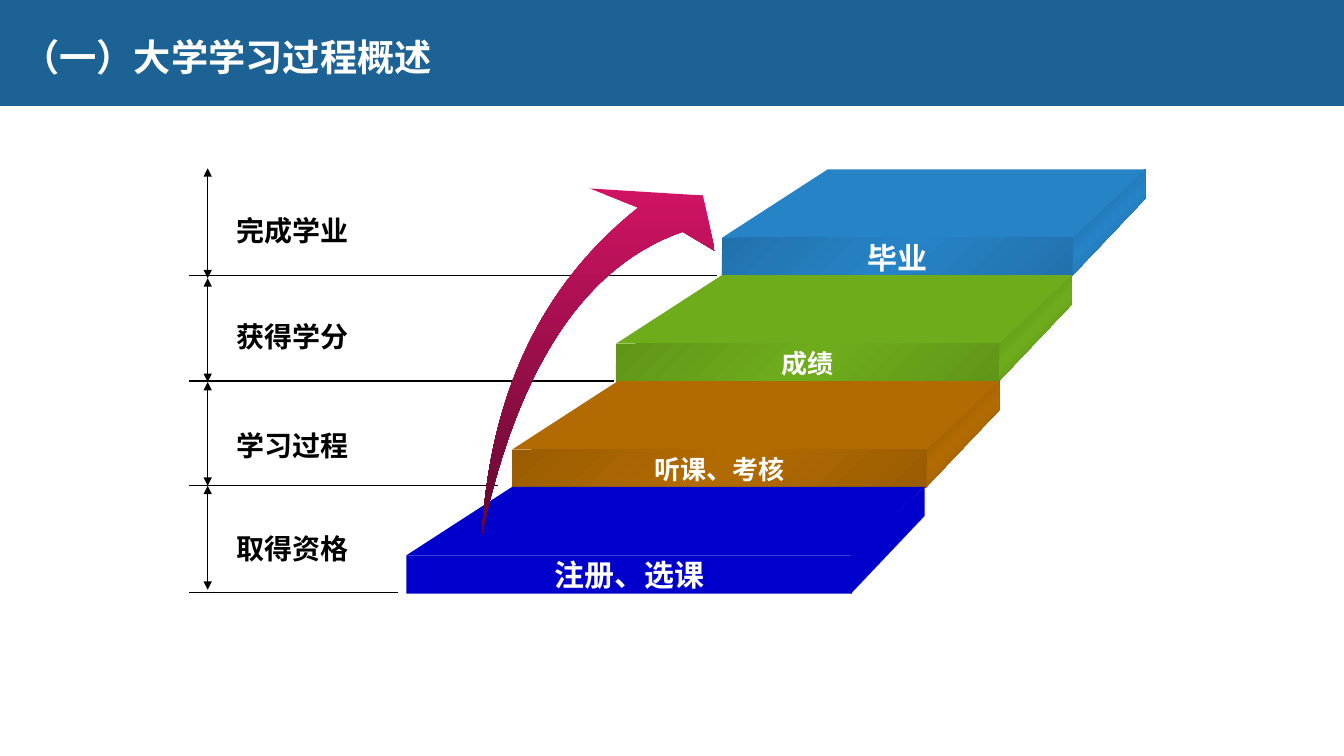
from itertools import pairwise

from lxml.etree import SubElement
from pptx import Presentation
from pptx.dml.color import RGBColor
from pptx.enum.shapes import MSO_CONNECTOR, MSO_SHAPE
from pptx.enum.text import MSO_ANCHOR, PP_ALIGN
from pptx.oxml.ns import qn
from pptx.util import Pt

PX = 9144  # EMU in one px, 100 px to the inch
FONT = "Noto Sans CJK SC"
COLORS = {
    "banner": "1D6294", "white": "FFFFFF", "black": "000000",
    "blue": "2683C6", "blue_front": "2172AC", "blue_side": "1B5E8E",
    "green": "6EAC1C", "green_front": "609618", "green_side": "4F7B14",
    "amber": "B26B02", "amber_front": "9B5D02", "amber_side": "7F4D01",
    "navy": "0000CC", "rose": "D11364", "wine": "61092E",
}

# Staircase: caption, size, colour, shaded edges, front left, front top, front width
STEPS = [
    ("毕业", 21.4, "blue", True, 716, 236, 348),
    ("成绩", 18.6, "green", True, 611, 341, 380),
    ("听课、考核", 18.6, "amber", True, 508, 446, 411),
    ("注册、选课", 21.4, "navy", False, 403, 551, 442),
]
FRONT_HEIGHT, DEPTH, LEFT_SKEW, RIGHT_SKEW = 38, 68, 105, 72
BACK_HEIGHT = 29

# Scale at the left
STAGES = [("完成学业", 207), ("获得学分", 312), ("学习过程", 420), ("取得资格", 522)]
LEVELS = [(711, 273), (609, 378), (494, 482), (395, 588)]
ARROW_STOPS = [167, 276, 379, 482, 585]
LEVEL_LEFT, ARROW_X, STAGE_LEFT = 187, 206, 225


def rgb(name):
    return RGBColor.from_string(COLORS[name])


def paint(shape, names, angle=45):
    """Fill with one colour, or with evenly spaced gradient colours (clockwise angle)."""
    shape.shadow.inherit = False
    shape.line.fill.background()
    if len(names) == 1:
        shape.fill.solid()
        shape.fill.fore_color.rgb = rgb(names[0])
        return
    shape.fill.gradient()
    shape.fill.gradient_angle = 360 - angle
    stops = shape._element.spPr.find(qn("a:gradFill")).find(qn("a:gsLst"))
    for old in list(stops):
        stops.remove(old)
    for i, name in enumerate(names):
        stop = SubElement(stops, qn("a:gs"), pos=str(100000 * i // (len(names) - 1)))
        SubElement(stop, qn("a:srgbClr"), val=COLORS[name])


def write(shape, text, size, color):
    shape.text_frame.text = text
    paragraph = shape.text_frame.paragraphs[0]
    run = paragraph.runs[0]
    run.font.size = Pt(size)
    run.font.bold = True
    run.font.color.rgb = rgb(color)
    run.font.name = FONT
    SubElement(run._r.get_or_add_rPr(), qn("a:ea"), typeface=FONT)
    return paragraph


def add_box(slide, left, top, width, height, names):
    box = slide.shapes.add_shape(
        MSO_SHAPE.RECTANGLE, left * PX, top * PX, width * PX, height * PX)
    paint(box, names)
    return box


def add_label(slide, left, top, width, height, text, size, color):
    label = slide.shapes.add_textbox(left * PX, top * PX, width * PX, height * PX)
    label.text_frame.word_wrap = True
    return label, write(label, text, size, color)


def add_line(slide, x1, y1, x2, y2, arrows=False):
    line = slide.shapes.add_connector(
        MSO_CONNECTOR.STRAIGHT, x1 * PX, y1 * PX, x2 * PX, y2 * PX)
    line.line.color.rgb = rgb("black")
    line.line.width = Pt(0.75)
    if arrows:
        for end in ("a:headEnd", "a:tailEnd"):
            SubElement(line.line._get_or_add_ln(), qn(end), type="triangle")
    SubElement(line._element.spPr, qn("a:effectLst"))


def add_outline(slide, points, names, angle=45):
    corners = [(round(x * PX), round(y * PX)) for x, y in points]
    builder = slide.shapes.build_freeform(*corners[0], scale=1.0)
    builder.add_line_segments(corners[1:], close=True)
    paint(builder.convert_to_shape(), names, angle)


def add_step(slide, caption, size, color, shaded, left, top, width):
    right, back = left + width, top - DEPTH
    back_right = right + RIGHT_SKEW

    def shades(part):
        edge = f"{color}_{part}"
        return [edge, color, edge] if shaded else [color]

    # Side, tread, front
    add_outline(slide, [(back_right, back + BACK_HEIGHT), (right - 1, top + FRONT_HEIGHT),
                        (right - 1, top), (back_right, back)], shades("side"))
    add_outline(slide, [(right, top), (left, top), (left + LEFT_SKEW, back),
                        (back_right, back)], [color])
    front = add_box(slide, left, top, width, FRONT_HEIGHT, shades("front"))
    front.text_frame.word_wrap = False
    front.text_frame.vertical_anchor = MSO_ANCHOR.MIDDLE
    write(front, caption, size, "white").alignment = PP_ALIGN.CENTER


def curve(start, control, end, pieces=28):
    """Points along a quadratic curve."""
    ts = [i / pieces for i in range(pieces + 1)]
    return [tuple((1 - t) ** 2 * a + 2 * t * (1 - t) * b + t ** 2 * c
                  for a, b, c in zip(start, control, end)) for t in ts]


def main():
    deck = Presentation()
    deck.slide_width, deck.slide_height = 1333 * PX, 750 * PX
    slide = deck.slides.add_slide(deck.slide_layouts[6])

    # Banner and title
    add_box(slide, 0, 0, 1333, 105, ["banner"])
    title, heading = add_label(
        slide, 0, 1, 1333, 106, "（一）大学学习过程概述", 26.6, "white")
    heading.line_spacing = 1.1
    frame = title.text_frame
    frame.vertical_anchor = MSO_ANCHOR.MIDDLE
    frame.margin_left = 22 * PX
    frame.margin_top = frame.margin_right = frame.margin_bottom = 5 * PX

    # Levels, spans between them and stage names
    for level_right, y in LEVELS:
        add_line(slide, level_right, y, LEVEL_LEFT, y)
    for upper, lower in pairwise(ARROW_STOPS):
        add_line(slide, ARROW_X, upper, ARROW_X, lower, arrows=True)
    for stage, top in STAGES:
        add_label(slide, STAGE_LEFT, top, 170, 54, stage, 20, "black")

    # Staircase
    for step in STEPS:
        add_step(slide, *step)

    # Rising arrow: outer edge, head, inner edge
    tail = (478, 530)
    rising = curve(tail, (490, 320), (633, 206))
    rising += [(585, 187), (697, 194), (709, 249)]
    rising += curve((677, 230), (532, 280), tail)[:-1]
    add_outline(slide, rising, ["rose", "wine"], angle=90)

    deck.save("out.pptx")


if __name__ == "__main__":
    main()
